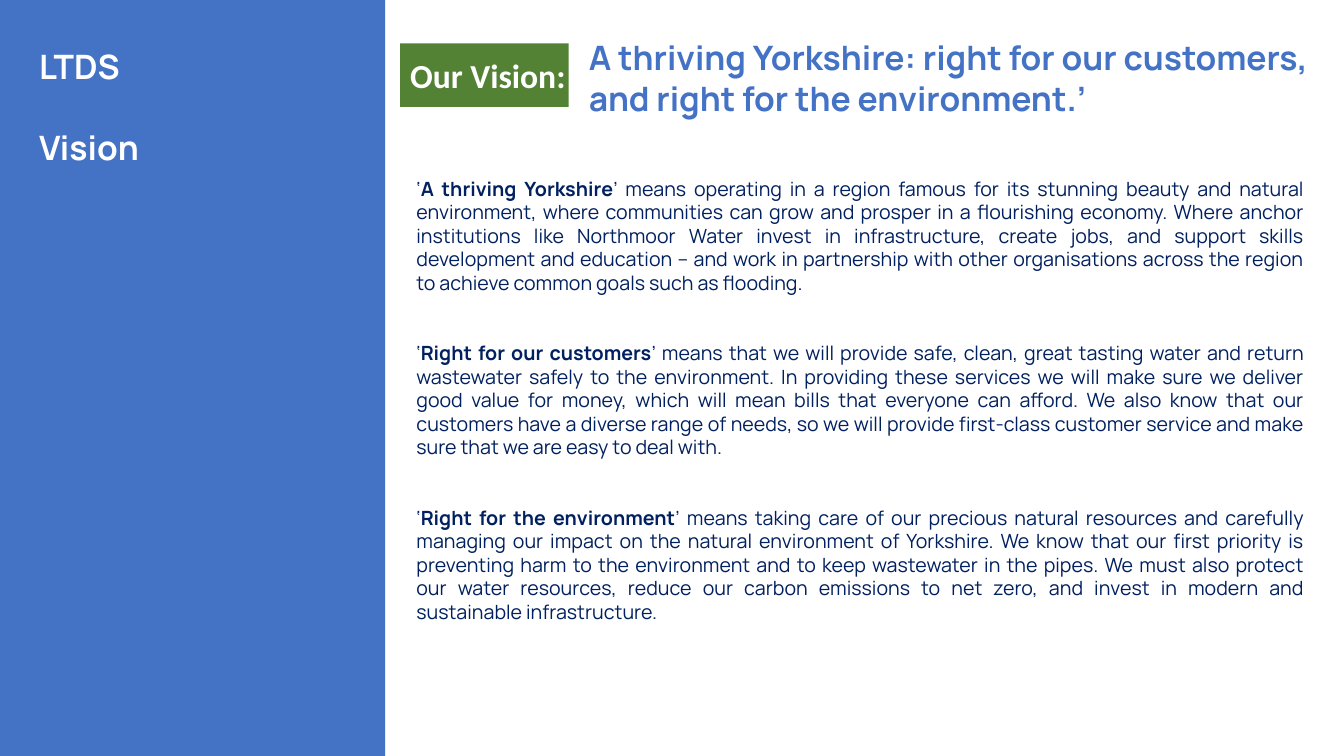
from pptx import Presentation
from pptx.dml.color import RGBColor
from pptx.enum.shapes import MSO_SHAPE
from pptx.enum.text import MSO_ANCHOR, MSO_AUTO_SIZE, PP_ALIGN
from pptx.oxml.ns import qn
from pptx.util import Inches, Pt

WHITE = RGBColor(0xFF, 0xFF, 0xFF)
BLUE = RGBColor(0x44, 0x72, 0xC4)
GREEN = RGBColor(0x54, 0x82, 0x35)
NAVY = RGBColor(0x00, 0x20, 0x60)

PANEL_FORMAT = {"name": "Manrope", "size": Pt(24), "bold": True}
HEADING_FORMAT = PANEL_FORMAT | {"color": BLUE}
SIDEBAR_FORMAT = PANEL_FORMAT | {"color": WHITE}
LABEL_FORMAT = SIDEBAR_FORMAT | {"name": "Calibri"}
BODY_FORMAT = {"name": "Manrope", "size": Pt(14), "bold": False, "color": NAVY}

HEADING = "A thriving Yorkshire: right for our customers, and right for the environment.’"
MEANINGS = [
    ("A thriving Yorkshire",
     "means operating in a region famous for its stunning beauty and natural environment, "
     "where communities can grow and prosper in a flourishing economy. Where anchor "
     "institutions like Northmoor Water invest in infrastructure, create jobs, and support "
     "skills development and education – and work in partnership with other organisations "
     "across the region to achieve common goals such as flooding."),
    ("Right for our customers",
     "means that we will provide safe, clean, great tasting water and return wastewater "
     "safely to the environment. In providing these services we will make sure we deliver "
     "good value for money, which will mean bills that everyone can afford. We also know "
     "that our customers have a diverse range of needs, so we will provide first-class "
     "customer service and make sure that we are easy to deal with."),
    ("Right for the environment",
     "means taking care of our precious natural resources and carefully managing our impact "
     "on the natural environment of Yorkshire. We know that our first priority is preventing "
     "harm to the environment and to keep wastewater in the pipes. We must also protect our "
     "water resources, reduce our carbon emissions to net zero, and invest in modern and "
     "sustainable infrastructure."),
]


def place(shape, left, top, width, height):
    box = {"left": left, "top": top, "width": width, "height": height}
    for name, value in box.items():
        setattr(shape, name, Inches(value))


def add_run(paragraph, text, text_format):
    run = paragraph.add_run()
    run.text = text
    for name, value in text_format.items():
        if name == "color":
            run.font.color.rgb = value
        else:
            setattr(run.font, name, value)


def fill_text(shape, paragraphs, gap=0, align=PP_ALIGN.LEFT, anchor=MSO_ANCHOR.TOP):
    """Write paragraphs, each a list of (text, format) runs, gap points apart."""
    frame = shape.text_frame
    frame.word_wrap = True
    frame.auto_size = MSO_AUTO_SIZE.NONE
    frame.vertical_anchor = anchor
    for index, runs in enumerate(paragraphs):
        paragraph = frame.add_paragraph() if index else frame.paragraphs[0]
        paragraph.alignment = align
        paragraph.space_before = Pt(gap if index else 0)
        for text, text_format in runs:
            add_run(paragraph, text, text_format)


def remove_bullets(shape):
    for paragraph in shape.text_frame.paragraphs:
        properties = paragraph._p.get_or_add_pPr()
        properties.set("marL", "0")
        properties.set("indent", "0")
        properties.append(properties.makeelement(qn("a:buNone"), {}))


def add_rectangle(slide, color, *box):
    shape = slide.shapes.add_shape(MSO_SHAPE.RECTANGLE, *map(Inches, box))
    shape.shadow.inherit = False
    shape.fill.solid()
    shape.fill.fore_color.rgb = color
    shape.line.fill.background()
    return shape


def meaning_runs(term, meaning):
    return [("‘", BODY_FORMAT), (term, BODY_FORMAT | {"bold": True}),
            (f"’ {meaning}", BODY_FORMAT)]


def main():
    presentation = Presentation()
    presentation.slide_width = Inches(13.33)
    presentation.slide_height = Inches(7.5)
    slide = presentation.slides.add_slide(presentation.slide_layouts[1])
    title, body = slide.placeholders

    place(title, 5.74, 0.32, 7.55, 0.91)
    fill_text(title, [[(HEADING, HEADING_FORMAT)]])

    place(body, 4.03, 1.7, 9.01, 4.58)
    fill_text(body, [meaning_runs(*item) for item in MEANINGS],
              gap=33.6, align=PP_ALIGN.JUSTIFY)
    remove_bullets(body)

    label = add_rectangle(slide, GREEN, 3.97, 0.43, 1.67, 0.63)
    label.text_frame.margin_right = 0
    fill_text(label, [[("Our Vision:", LABEL_FORMAT)]], anchor=MSO_ANCHOR.MIDDLE)

    add_rectangle(slide, BLUE, 0, 0, 3.82, 7.5)
    sidebar = slide.shapes.add_textbox(*map(Inches, (0.29, 0.41, 3.33, 1.31)))
    fill_text(sidebar, [[(text, SIDEBAR_FORMAT)] for text in ("LTDS", "Vision")], gap=28.8)

    presentation.save("out.pptx")


if __name__ == "__main__":
    main()
